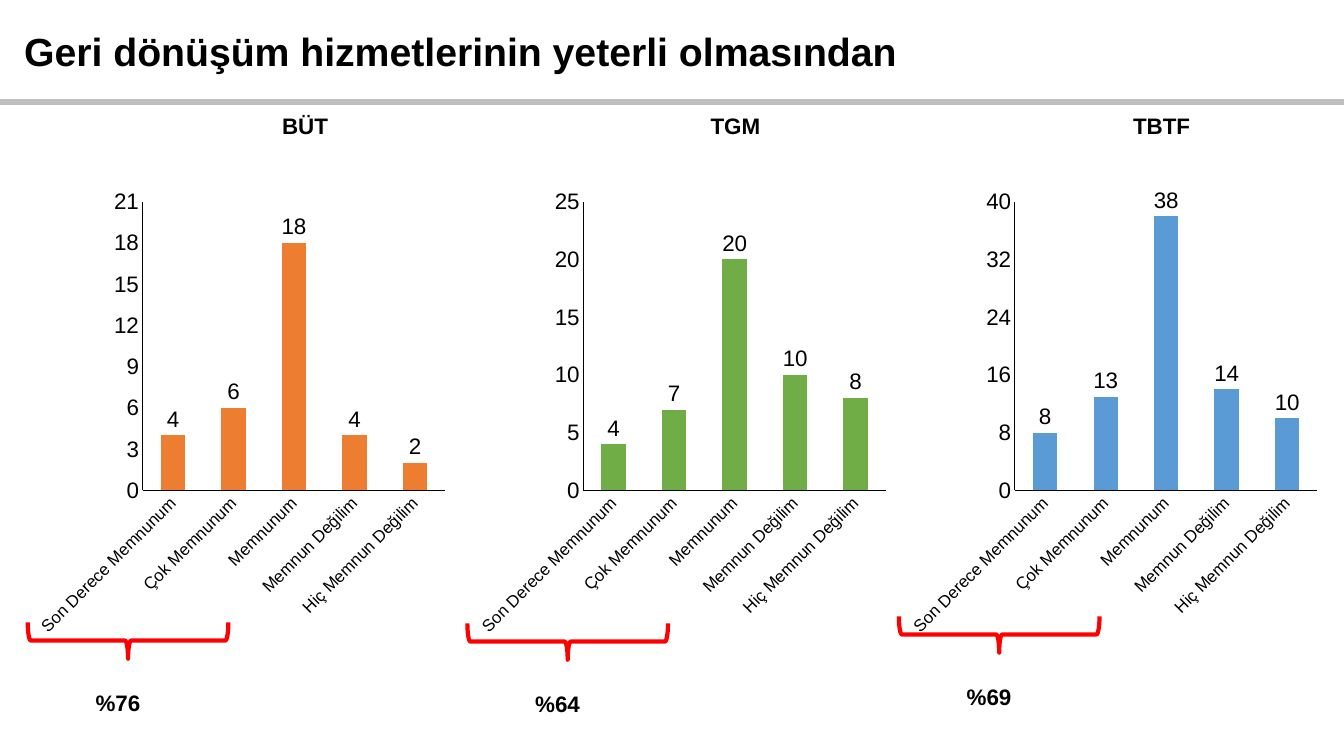
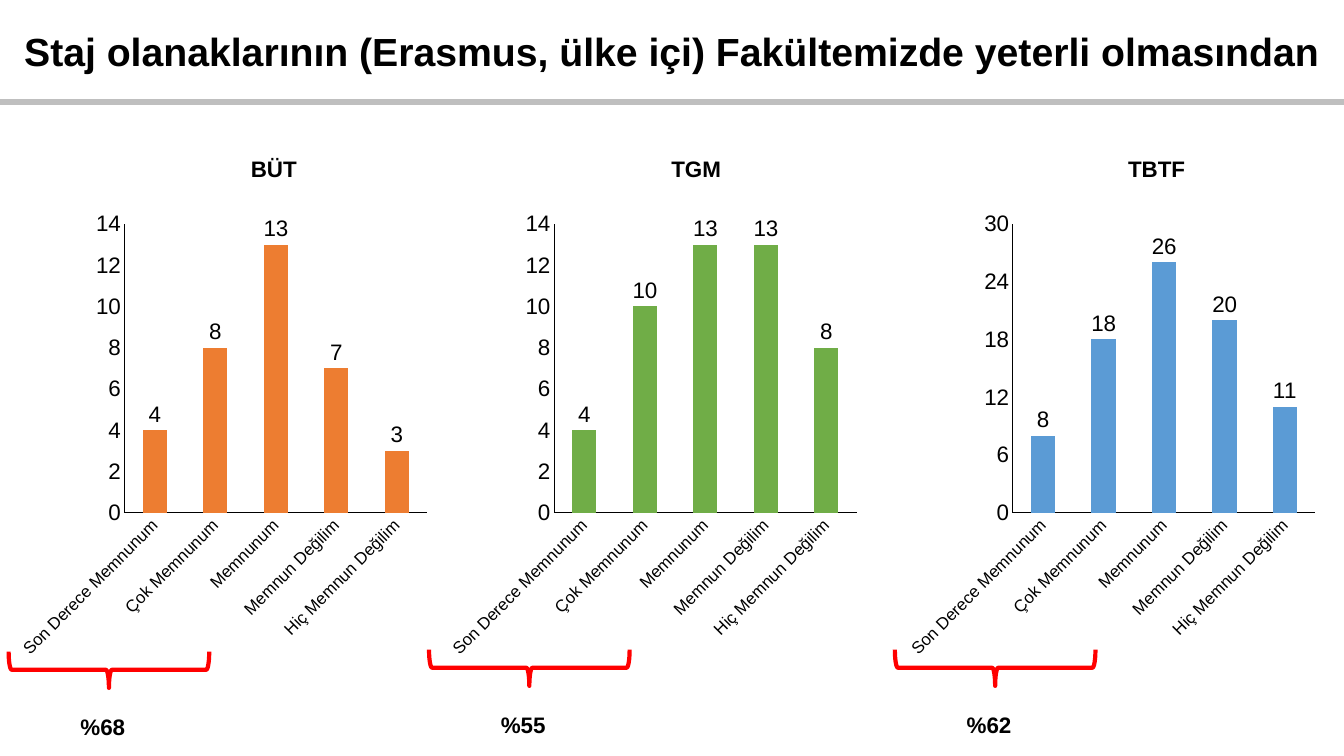
from collections import namedtuple

from pptx import Presentation
from pptx.chart.data import CategoryChartData
from pptx.dml.color import RGBColor
from pptx.enum.chart import XL_CHART_TYPE, XL_LABEL_POSITION, XL_TICK_MARK
from pptx.enum.shapes import MSO_CONNECTOR, MSO_SHAPE
from pptx.enum.text import MSO_ANCHOR, MSO_AUTO_SIZE, PP_ALIGN
from pptx.oxml.ns import qn
from pptx.util import Emu, Pt

COLUMNS = XL_CHART_TYPE.COLUMN_CLUSTERED
OUTSIDE_END = XL_LABEL_POSITION.OUTSIDE_END
NO_TICK = XL_TICK_MARK.NONE
STRAIGHT = MSO_CONNECTOR.STRAIGHT
BRACE = MSO_SHAPE.RIGHT_BRACE
TOP = MSO_ANCHOR.TOP
GROW = MSO_AUTO_SIZE.SHAPE_TO_FIT_TEXT
LEFT = PP_ALIGN.LEFT

# Shared look; lengths are px at 100 to the inch
FONT = "Arial"
BLACK, GREY, RED = "000000", "BFBFBF", "FF0000"
SLIDE_W, SLIDE_H = 1333, 750
CHART_W, CHART_H = 421, 461
BRACE_W, BRACE_H = 36, 199
LABEL_W, LABEL_H = 94, 37

ANSWERS = ["Son Derece Memnunum", "Çok Memnunum", "Memnunum",
           "Memnun Değilim", "Hiç Memnun Değilim"]
DEPARTMENTS = [("BÜT", "ED7D31"), ("TGM", "70AD47"), ("TBTF", "5B9BD5")]

# Positions that differ from panel to panel, with the panel's data
Panel = namedtuple("Panel", "chart_x heading_x brace_x brace_y values top step percent")
Survey = namedtuple("Survey", "title title_w chart_y heading_y percent_dx percent_dy panels")

SURVEYS = [
    Survey("Geri dönüşüm hizmetlerinin yeterli olmasından", 896, 179, 106, -24, 143, [
        Panel(29, 270, 109, 536, (4, 6, 18, 4, 2), 21, 3, "%76"),
        Panel(466, 695, 545, 537, (4, 7, 20, 10, 8), 25, 5, "%64"),
        Panel(894, 1114, 973, 530, (8, 13, 38, 14, 10), 40, 8, "%69"),
    ]),
    Survey("Staj olanaklarının (Erasmus, ülke içi) Fakültemizde yeterli olmasından",
           1320, 201, 149, -20, 138, [
               Panel(11, 239, 90, 565, (4, 8, 13, 7, 3), 14, 2, "%68"),
               Panel(437, 656, 507, 563, (4, 10, 13, 13, 8), 14, 2, "%55"),
               Panel(892, 1109, 969, 563, (8, 18, 26, 20, 11), 30, 6, "%62"),
           ]),
]


def px(n):
    return Emu(n * 9144)


def rgb(color):
    return RGBColor.from_string(color)


def set_font(font, size, bold=False, color=BLACK):
    font.name, font.size, font.bold = FONT, Pt(size), bold
    font.color.rgb = rgb(color)


def set_line(line, color, width):
    line.color.rgb = rgb(color)
    line.width = Pt(width)


def write(sp, text, size=16, bold=True, color=BLACK, wrap=True):
    tf = sp.text_frame
    tf.word_wrap, tf.auto_size, tf.vertical_anchor = wrap, GROW, TOP
    p = tf.paragraphs[0]
    p.alignment = LEFT
    r = p.add_run()
    r.text = text
    set_font(r.font, size, bold, color)


def add_label(slide, text, x, y):
    write(slide.shapes.add_textbox(px(x), px(y), px(LABEL_W), px(LABEL_H)), text)


def add_header(slide, text, width):
    sp = slide.shapes.title
    sp.left, sp.top, sp.width, sp.height = px(14), px(22), px(width), px(57)
    write(sp, text, size=28, wrap=False)
    rule = slide.shapes.add_connector(STRAIGHT, 0, px(101), px(SLIDE_W), px(101))
    set_line(rule.line, GREY, 4.5)
    sp_pr = rule.element.spPr
    sp_pr.append(sp_pr.makeelement(qn("a:effectLst"), {}))


def add_columns(slide, panel, y, color):
    data = CategoryChartData()
    data.categories = ANSWERS
    data.add_series("Series 1", panel.values)
    chart = slide.shapes.add_chart(COLUMNS, px(panel.chart_x), px(y),
                                   px(CHART_W), px(CHART_H), data).chart
    chart.has_legend = chart.has_title = False
    set_font(chart.font, 16)

    # Bars and value labels
    plot = chart.plots[0]
    plot.gap_width, plot.vary_by_categories = 150, False
    fill = plot.series[0].format.fill
    fill.solid()
    fill.fore_color.rgb = rgb(color)
    plot.has_data_labels = True
    plot.data_labels.show_value = True
    plot.data_labels.position = OUTSIDE_END

    # Axes
    for axis in (chart.category_axis, chart.value_axis):
        axis.has_major_gridlines = False
        axis.major_tick_mark = axis.minor_tick_mark = NO_TICK
        set_line(axis.format.line, BLACK, 0.75)
    axis = chart.value_axis
    axis.minimum_scale, axis.maximum_scale, axis.major_unit = 0, panel.top, panel.step
    set_font(chart.category_axis.tick_labels.font, 12)
    for body in chart.element.xpath(".//c:catAx/c:txPr/a:bodyPr"):
        body.set("rot", "-2700000")


def add_brace(slide, x, y):
    sp = slide.shapes.add_shape(BRACE, px(x), px(y), px(BRACE_W), px(BRACE_H))
    sp.rotation = 90
    sp.shadow.inherit = False
    sp.fill.background()
    set_line(sp.line, RED, 3)


def add_survey(prs, survey):
    slide = prs.slides.add_slide(prs.slide_layouts.get_by_name("Title Only"))
    add_header(slide, survey.title, survey.title_w)
    for (name, color), panel in zip(DEPARTMENTS, survey.panels):
        add_columns(slide, panel, survey.chart_y, color)
        add_label(slide, name, panel.heading_x, survey.heading_y)
        add_brace(slide, panel.brace_x, panel.brace_y)
        add_label(slide, panel.percent, panel.brace_x + survey.percent_dx,
                  panel.brace_y + survey.percent_dy)


def main():
    prs = Presentation()
    prs.slide_width, prs.slide_height = px(SLIDE_W), px(SLIDE_H)
    for survey in SURVEYS:
        add_survey(prs, survey)
    prs.save("out.pptx")


if __name__ == "__main__":
    main()
